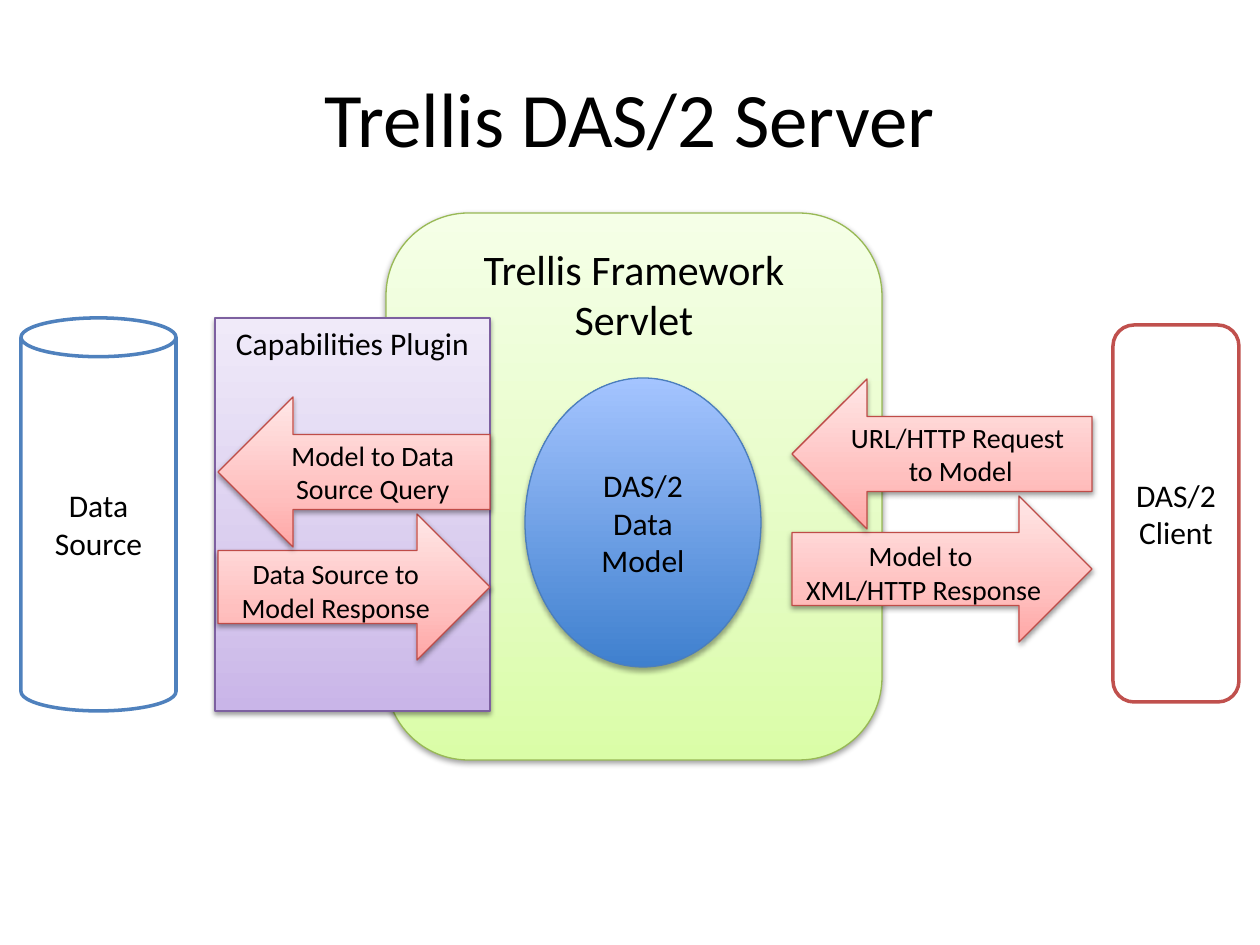
from pptx import Presentation
from pptx.dml.color import RGBColor
from pptx.enum.shapes import MSO_SHAPE
from pptx.enum.text import MSO_ANCHOR, PP_ALIGN
from pptx.oxml import parse_xml
from pptx.oxml.ns import nsdecls, qn
from pptx.util import Emu, Pt

PX = 914400 / 126

BLACK = RGBColor(0x00, 0x00, 0x00)
WHITE = RGBColor(0xFF, 0xFF, 0xFF)
GREEN_LINE = RGBColor(0x98, 0xB9, 0x55)
PURPLE_LINE = RGBColor(0x7D, 0x60, 0xA0)
BLUE_LINE = RGBColor(0x4B, 0x7E, 0xBC)
RED_LINE = RGBColor(0xBF, 0x4C, 0x48)
SOURCE_LINE = RGBColor(0x4F, 0x81, 0xBD)
CLIENT_LINE = RGBColor(0xC0, 0x50, 0x4D)

# Gradient stops run from the bottom edge to the top: percent, colour
GREEN = [(0, RGBColor(0xDA, 0xFD, 0xA7)), (35, RGBColor(0xE4, 0xFC, 0xC2)),
         (100, RGBColor(0xF5, 0xFF, 0xE7))]
PURPLE = [(0, RGBColor(0xC9, 0xB5, 0xE8)), (35, RGBColor(0xD8, 0xCB, 0xEE)),
          (100, RGBColor(0xF0, 0xEA, 0xF9))]
BLUE = [(0, RGBColor(0x3F, 0x80, 0xCE)), (100, RGBColor(0xA4, 0xC4, 0xFF))]
RED = [(0, RGBColor(0xFF, 0xA6, 0xA5)), (35, RGBColor(0xFF, 0xC0, 0xBF)),
       (100, RGBColor(0xFF, 0xE7, 0xE7))]


def px(length):
    return Emu(round(length * PX))


class Diagram:
    font = "Calibri"

    def __init__(self, slide):
        self.slide = slide

    def add_lines(self, shape, lines, size, anchor):
        frame = shape.text_frame
        for name, value in {"word_wrap": True, "vertical_anchor": anchor}.items():
            setattr(frame, name, value)
        for index, line in enumerate(lines):
            para = frame.add_paragraph() if index else frame.paragraphs[0]
            para.alignment = PP_ALIGN.CENTER
            span = para.add_run()
            span.text = line
            for name, value in {"name": self.font, "size": Pt(size)}.items():
                setattr(span.font, name, value)
            span.font.color.rgb = BLACK

    def title(self, area, text):
        box = self.slide.shapes.add_textbox(*map(px, area))
        self.add_lines(box, [text], 44, MSO_ANCHOR.MIDDLE)

    def shape(self, kind, area, lines, line_color, weight, size, anchor):
        shape = self.slide.shapes.add_shape(kind, *map(px, area))
        shape.shadow.inherit = False
        shape.line.color.rgb = line_color
        shape.line.width = Pt(weight)
        self.add_lines(shape, lines, size, anchor)
        return shape

    def outlined(self, kind, area, text, line_color):
        shape = self.shape(kind, area, [text], line_color, 2, 18, MSO_ANCHOR.MIDDLE)
        shape.fill.solid()
        shape.fill.fore_color.rgb = WHITE

    def shaded(self, kind, area, lines, stops, line_color, size=18,
               anchor=MSO_ANCHOR.TOP, shadow=(38, 1.6)):
        """Add a shape with a vertical gradient and a shadow (opacity, distance)."""
        shape = self.shape(kind, area, lines, line_color, 0.75, size, anchor)
        shape.fill.gradient()
        shape.fill.gradient_angle = 90
        properties = shape._element.spPr
        stop_list = properties.find(qn("a:gradFill")).find(qn("a:gsLst"))
        for stop in list(stop_list):
            stop_list.remove(stop)
        for percent, color in stops:
            stop_list.append(parse_xml(
                f'<a:gs {nsdecls("a")} pos="{percent * 1000}">'
                f'<a:srgbClr val="{color}"/></a:gs>'))
        opacity, distance = shadow
        properties.find(qn("a:effectLst")).append(parse_xml(
            f'<a:outerShdw {nsdecls("a")} blurRad="{Pt(3.1)}" dist="{Pt(distance)}" '
            f'dir="5400000" rotWithShape="0"><a:srgbClr val="{BLACK}">'
            f'<a:alpha val="{opacity * 1000}"/></a:srgbClr></a:outerShdw>'))

    def arrow_pair(self, left, top, width, request, response):
        """Add a left arrow with a right arrow below it."""
        self.shaded(MSO_SHAPE.RIGHT_ARROW, (left, top + 117, width, 146),
                    response, RED, RED_LINE, 16)
        self.shaded(MSO_SHAPE.LEFT_ARROW, (left, top, width, 150),
                    request, RED, RED_LINE, 16, MSO_ANCHOR.MIDDLE)


def main():
    deck = Presentation()
    deck.slide_width, deck.slide_height = px(1260), px(945)
    page = Diagram(deck.slides.add_slide(deck.slide_layouts[6]))

    page.shaded(MSO_SHAPE.FLOWCHART_ALTERNATE_PROCESS, (386, 213, 496, 547),
                ["Trellis Framework Servlet"], GREEN, GREEN_LINE, 24)
    page.shaded(MSO_SHAPE.RECTANGLE, (215, 318, 275, 393),
                ["Capabilities Plugin"], PURPLE, PURPLE_LINE)
    page.title((63, 38, 1134, 158), "Trellis DAS/2 Server")
    page.shaded(MSO_SHAPE.OVAL, (525, 378, 236, 289), ["DAS/2 Data Model"],
                BLUE, BLUE_LINE, anchor=MSO_ANCHOR.MIDDLE, shadow=(35, 1.8))

    page.arrow_pair(792, 379, 300, ["URL/HTTP Request ", "to Model"],
                    ["Model to ", "XML/HTTP Response"])
    page.arrow_pair(218, 397, 272, ["Model to Data Source Query"],
                    ["Data Source to Model Response"])

    page.outlined(MSO_SHAPE.CAN, (21, 318, 155, 393), "Data Source", SOURCE_LINE)
    page.outlined(MSO_SHAPE.ROUNDED_RECTANGLE, (1113, 325, 126, 377),
                  "DAS/2 Client", CLIENT_LINE)
    deck.save("out.pptx")


if __name__ == "__main__":
    main()
